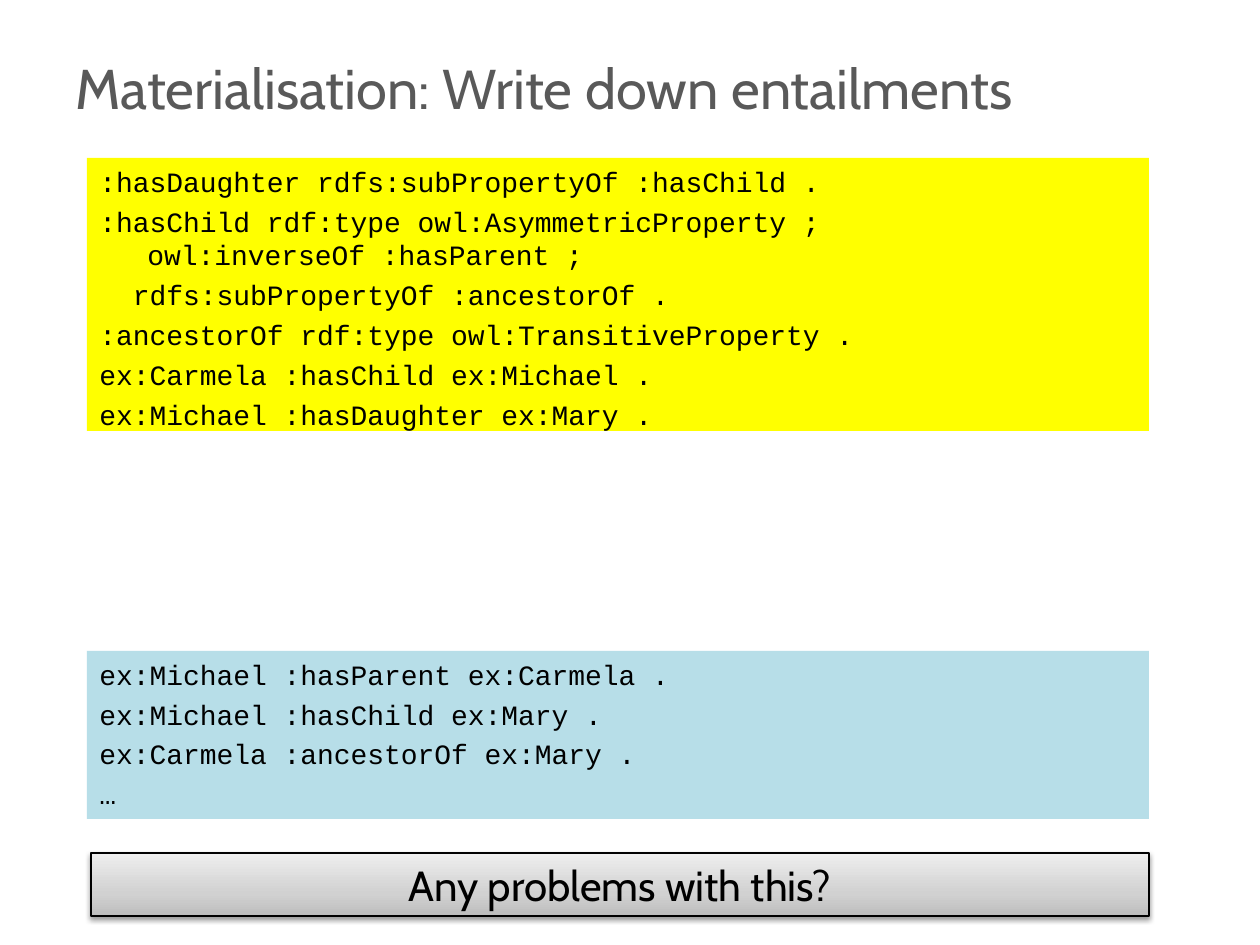
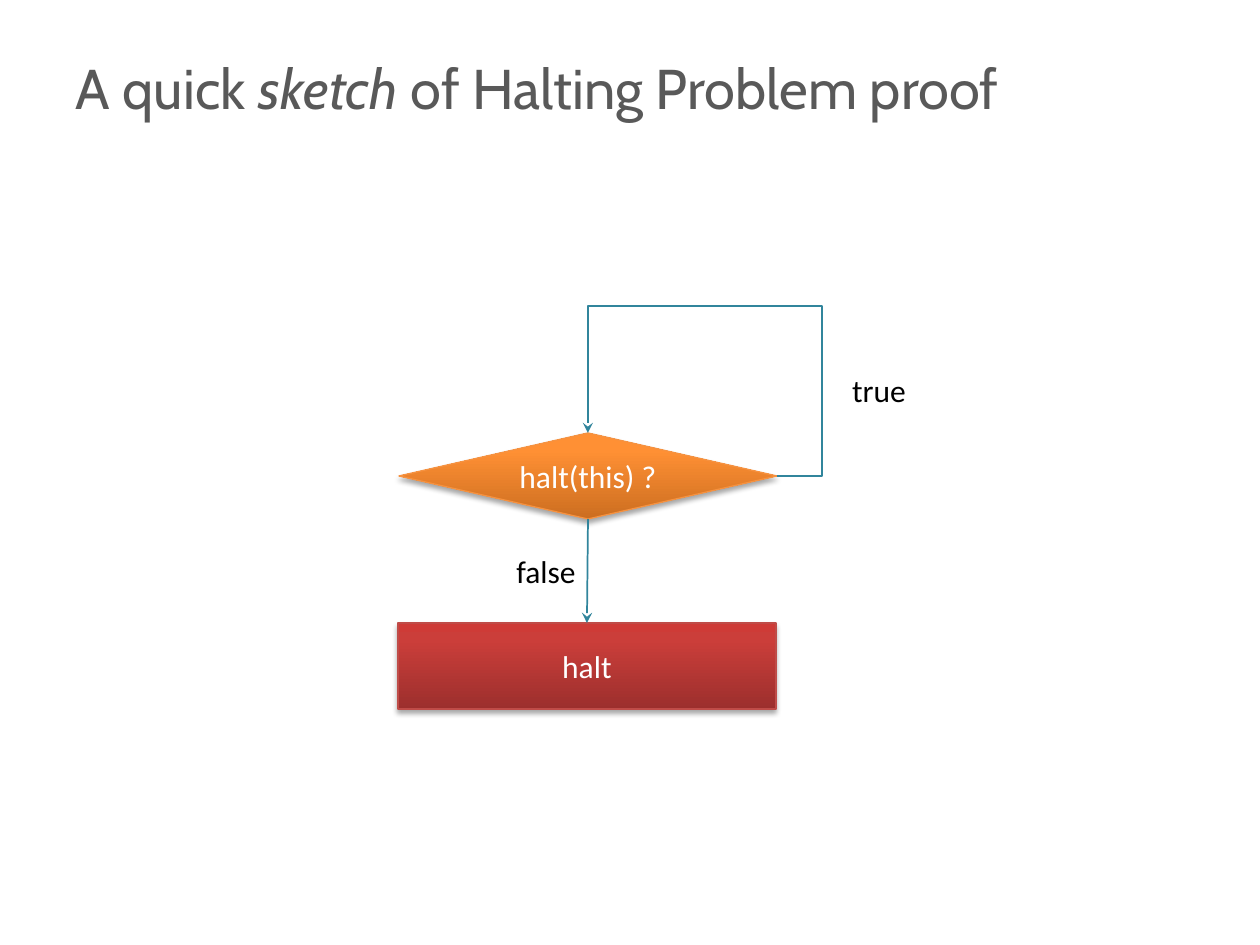
from lxml.etree import SubElement
from pptx import Presentation
from pptx.dml.color import RGBColor
from pptx.enum.shapes import MSO_CONNECTOR as LINK, MSO_SHAPE as SHAPE
from pptx.enum.text import MSO_ANCHOR as ANCHOR, PP_ALIGN as ALIGN
from pptx.oxml.ns import qn
from pptx.util import Emu, Pt

PX = 914400 // 126
HEADING, BODY, CODE = "Cabin", "Calibri", "Courier New"
BLACK, WHITE, GREY, TEAL = "000000", "FFFFFF", "595959", "31859C"
YELLOW, PALE_BLUE = "FFFF00", "B7DEE8"
SILVER = [(0, "BDBDBD"), (35, "D1D1D1"), (100, "EEEEEE")]
ORANGE = [(0, "CC6E20"), (80, "FF9034"), (100, "FF9136")]
RED = [(0, "9C2F2D"), (80, "CB3E3A"), (100, "CE3B37")]
TITLE_BOX = (63, 38, 1134, 98)

AXIOMS = [
    ":hasDaughter rdfs:subPropertyOf :hasChild .",
    ":hasChild rdf:type owl:AsymmetricProperty ;\nowl:inverseOf :hasParent ;",
    "  rdfs:subPropertyOf :ancestorOf .",
    ":ancestorOf rdf:type owl:TransitiveProperty .",
    "ex:Carmela :hasChild ex:Michael .",
    "ex:Michael :hasDaughter ex:Mary .",
]
ENTAILMENTS = [
    "ex:Michael :hasParent ex:Carmela .",
    "ex:Michael :hasChild ex:Mary .",
    "ex:Carmela :ancestorOf ex:Mary .",
    "…",
]


def px(*lengths):
    return [Emu(length * PX) for length in lengths]


def color(hex_string):
    return RGBColor.from_string(hex_string)


def add_run(paragraph, text, size, font, ink, italic=None):
    run = paragraph.add_run()
    run.text = text
    run.font.size, run.font.name, run.font.italic = Pt(size), font, italic
    run.font.color.rgb = color(ink)


def add_title(slide, *parts):
    """Each part is a text and whether it is italic."""
    title = slide.shapes.title
    title.left, title.top, title.width, title.height = px(*TITLE_BOX)
    title.text_frame.vertical_anchor = ANCHOR.MIDDLE
    paragraph = title.text_frame.paragraphs[0]
    paragraph.alignment = ALIGN.LEFT
    for text, italic in parts:
        add_run(paragraph, text, 32, HEADING, GREY, italic)


def add_code(slide, box, fill, statements):
    block = slide.shapes.add_shape(SHAPE.RECTANGLE, *px(*box))
    block.shadow.inherit = False
    block.fill.solid()
    block.fill.fore_color.rgb = color(fill)
    block.line.fill.background()
    frame = block.text_frame
    frame.word_wrap, frame.vertical_anchor = True, ANCHOR.TOP
    for i, statement in enumerate(statements):
        paragraph = frame.add_paragraph() if i else frame.paragraphs[0]
        paragraph.alignment = ALIGN.LEFT
        # Hanging indent
        margin = px(48)[0]
        properties = paragraph._p.get_or_add_pPr()
        properties.set("marL", str(margin))
        properties.set("indent", str(-margin))
        if i:
            paragraph.space_before = Pt(3.6)
        for j, line in enumerate(statement.split("\n")):
            if j:
                paragraph.add_line_break()
            add_run(paragraph, line, 16, CODE, BLACK)


def add_glossy(slide, kind, box, stops, outline, opacity, drop,
               text, size, font, ink):
    """A shape with an upward gradient, a soft shadow and a centred label."""
    shape = slide.shapes.add_shape(kind, *px(*box))
    shape.line.color.rgb, shape.line.width = color(outline), Pt(0.75)
    # Gradient
    properties = shape._element.spPr
    gradient = SubElement(properties, qn("a:gradFill"), rotWithShape="1")
    stop_list = SubElement(gradient, qn("a:gsLst"))
    for position, shade in stops:
        stop = SubElement(stop_list, qn("a:gs"), pos=str(position * 1000))
        SubElement(stop, qn("a:srgbClr"), val=shade)
    SubElement(gradient, qn("a:lin"), ang="16200000", scaled="0")
    properties.find(qn("a:prstGeom")).addnext(gradient)
    # Shadow
    shape.shadow.inherit = False
    shadow = SubElement(properties.find(qn("a:effectLst")), qn("a:outerShdw"),
                        blurRad=str(Pt(3.1)), dist=str(Pt(drop)),
                        dir="5400000", rotWithShape="0")
    tint = SubElement(shadow, qn("a:srgbClr"), val=BLACK)
    SubElement(tint, qn("a:alpha"), val=str(opacity * 1000))
    # Label
    frame = shape.text_frame
    frame.word_wrap, frame.vertical_anchor = True, ANCHOR.MIDDLE
    frame.paragraphs[0].alignment = ALIGN.CENTER
    add_run(frame.paragraphs[0], text, size, font, ink)
    return shape


def add_branch(slide, kind, start, start_site, end, end_site):
    branch = slide.shapes.add_connector(kind, 0, 0, 0, 0)
    branch.begin_connect(start, start_site)
    branch.end_connect(end, end_site)
    branch.line.color.rgb, branch.line.width = color(TEAL), Pt(1)
    SubElement(branch.line._get_or_add_ln(), qn("a:tailEnd"), type="stealth")
    SubElement(branch._element.spPr, qn("a:effectLst"))
    return branch


def add_branch_label(slide, box, text):
    frame = slide.shapes.add_textbox(*px(*box)).text_frame
    frame.word_wrap = True
    frame.paragraphs[0].alignment = ALIGN.CENTER
    add_run(frame.paragraphs[0], text, 18, BODY, BLACK)


def add_flowchart(slide, box):
    left, top, width, height = box
    step = 86
    decision = add_glossy(slide, SHAPE.FLOWCHART_DECISION,
                          (left + 1, top, width, step), ORANGE, "F69240",
                          35, 1.8, "halt(this) ?", 18, BODY, WHITE)
    halt = add_glossy(slide, SHAPE.RECTANGLE,
                      (left, top + height - step, width, step), RED, "BF4C48",
                      35, 1.8, "halt", 18, BODY, WHITE)
    # Downward branch
    add_branch(slide, LINK.STRAIGHT, decision, 2, halt, 0)
    add_branch_label(slide, (left + 64, top + 113, 168, 50), "false")
    # Loop from the right corner back to the top
    loop = add_branch(slide, LINK.ELBOW, decision, 3, decision, 0)
    geometry = loop._element.spPr.find(qn("a:prstGeom"))
    geometry.set("prst", "bentConnector4")
    adjustments = geometry.get_or_add_avLst()
    for name, value in (("adj1", -23900), ("adj2", 395100)):
        SubElement(adjustments, qn("a:gd"), name=name, fmla=f"val {value}")
    add_branch_label(slide, (left + 397, top - 68, 168, 50), "true")


def build_materialisation(slide):
    add_title(slide, ("Materialisation: Write down entailments", None))
    add_code(slide, (87, 651, 1062, 168), PALE_BLUE, ENTAILMENTS)
    add_code(slide, (87, 158, 1062, 273), YELLOW, AXIOMS)
    add_glossy(slide, SHAPE.RECTANGLE, (91, 853, 1058, 63), SILVER, BLACK,
               38, 1.6, "Any problems with this?", 24, HEADING, BLACK)


def build_halting(slide):
    add_title(slide, ("A quick ", None), ("sketch", True),
              (" of Halting Problem proof", None))
    add_flowchart(slide, (398, 433, 378, 276))


def main():
    deck = Presentation()
    deck.slide_width, deck.slide_height = px(1260, 945)
    title_only = deck.slide_layouts[5]
    for build in (build_materialisation, build_halting):
        build(deck.slides.add_slide(title_only))
    deck.save("out.pptx")


if __name__ == "__main__":
    main()
